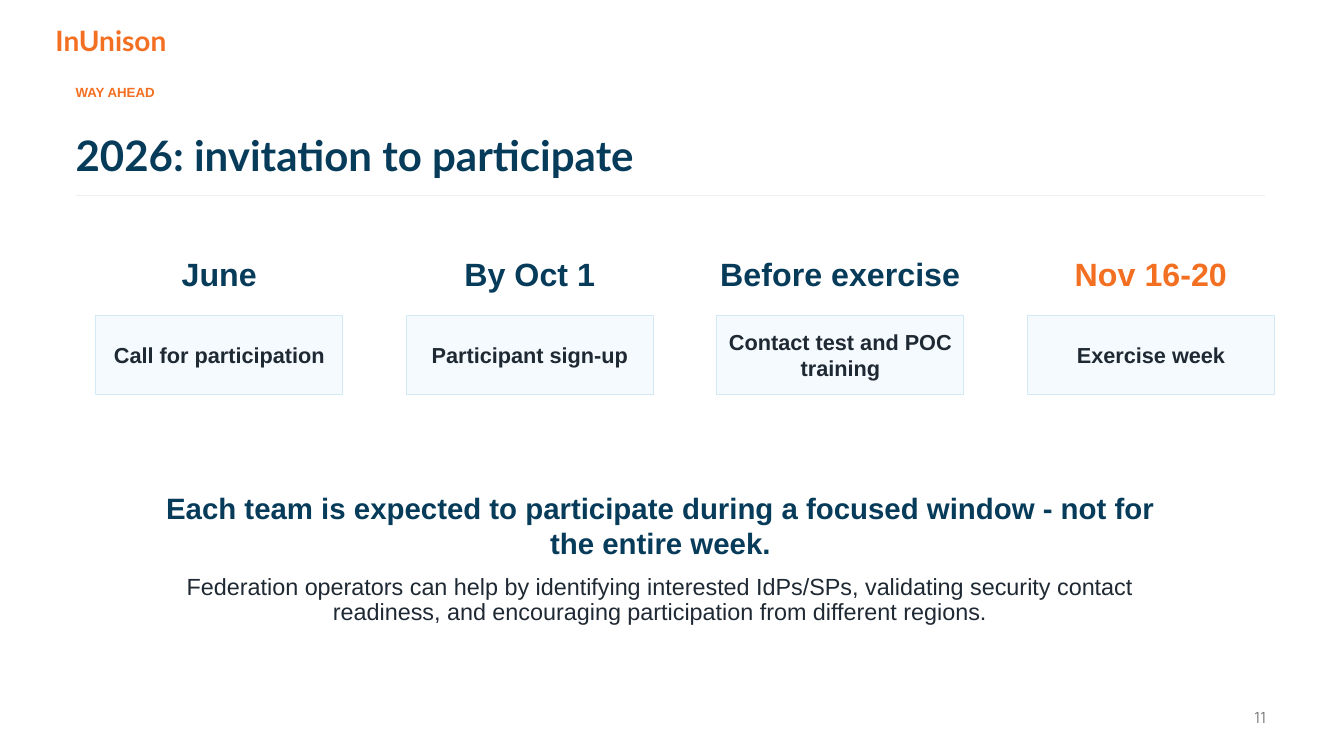
from pptx import Presentation
from pptx.dml.color import RGBColor as RGB
from pptx.enum.shapes import MSO_CONNECTOR as Conn, MSO_SHAPE as Kind
from pptx.enum.text import MSO_ANCHOR as Anchor, MSO_AUTO_SIZE as Fit, PP_ALIGN as Align
from pptx.oxml.ns import qn
from pptx.util import Pt
from lxml import etree

PX = 9144  # EMU per px, 100 px to the inch
COLORS = {
    "navy": "073B5A", "orange": "F36F21", "ink": "1F2933", "gray": "757575",
    "pale": "F4FAFD", "edge": "D3EAF6", "rule": "EEF2F4",
}
STEPS = [
    ("June", "Call for participation", "navy"),
    ("By Oct 1", "Participant sign-up", "navy"),
    ("Before exercise", "Contact test and POC training", "navy"),
    ("Nov 16-20", "Exercise week", "orange"),
]
LEFT, PITCH, WIDE = 95, 308, 245  # step columns


def color(name):
    return RGB.from_string(COLORS[name])


def scale(*nums):
    return [n * PX for n in nums]


def write(shape, text, size=16, hue="navy", font="Arial", bold=True,
          align=Align.CENTER, pad=(0, 0), lead=None):
    frame = shape.text_frame
    frame.word_wrap = True
    frame.auto_size = Fit.NONE
    frame.vertical_anchor = Anchor.MIDDLE
    frame.margin_left = frame.margin_right = pad[0] * PX
    frame.margin_top = frame.margin_bottom = pad[1] * PX
    para = frame.paragraphs[0]
    para.alignment = align
    if lead:
        para.line_spacing = lead
    run = para.add_run()
    run.text = text
    run.font.name = font
    run.font.size = Pt(size)
    run.font.bold = bold
    run.font.color.rgb = color(hue)


def label(slide, box, text, **form):
    write(slide.shapes.add_textbox(*scale(*box)), text, **form)


def head(slide, box, text, **form):
    title = slide.shapes.title
    title.left, title.top, title.width, title.height = scale(*box)
    write(title, text, **form)


def card(slide, box, text, **form):
    shape = slide.shapes.add_shape(Kind.RECTANGLE, *scale(*box))
    shape.shadow.inherit = False
    shape.fill.solid()
    shape.fill.fore_color.rgb = color("pale")
    shape.line.color.rgb = color("edge")
    shape.line.width = Pt(0.75)
    write(shape, text, **form)


def rule(slide, x1, x2, y):
    line = slide.shapes.add_connector(Conn.STRAIGHT, *scale(x1, y, x2, y))
    line.line.color.rgb = color("rule")
    line.line.width = Pt(1)
    etree.SubElement(line._element.spPr, qn("a:effectLst"))


def main():
    deck = Presentation()
    deck.slide_width, deck.slide_height = scale(1333, 750)
    slide = deck.slides.add_slide(deck.slide_layouts[5])

    # Header
    label(slide, (55, 22, 195, 35), "InUnison", size=20, hue="orange",
          font="Lato", align=Align.LEFT)
    label(slide, (75, 82, 1020, 18), "WAY AHEAD", size=9.5, hue="orange",
          align=Align.LEFT)
    head(slide, (75, 128, 1160, 50), "2026: invitation to participate",
         size=30, font="Lato", align=Align.LEFT)
    rule(slide, 75, 1255, 194)

    # Timeline steps
    for i, (date, task, hue) in enumerate(STEPS):
        x = LEFT + i * PITCH
        label(slide, (x, 245, WIDE, 52), date, size=23, hue=hue)
        card(slide, (x, 313, WIDE, 78), task, size=15.5, hue="ink")

    # Closing message
    label(slide, (155, 500, 1000, 42),
          "Each team is expected to participate during a focused window"
          " - not for the entire week.", size=21)
    label(slide, (142, 570, 1025, 52),
          "Federation operators can help by identifying interested IdPs/SPs,"
          " validating security contact readiness, and encouraging"
          " participation from different regions.",
          size=16.7, hue="ink", bold=False, lead=0.9)

    # Page number
    label(slide, (1151, 692, 115, 40), "11", size=11, hue="gray",
          font="Manrope", bold=False, align=Align.RIGHT, pad=(10, 5))

    deck.save("out.pptx")


if __name__ == "__main__":
    main()
